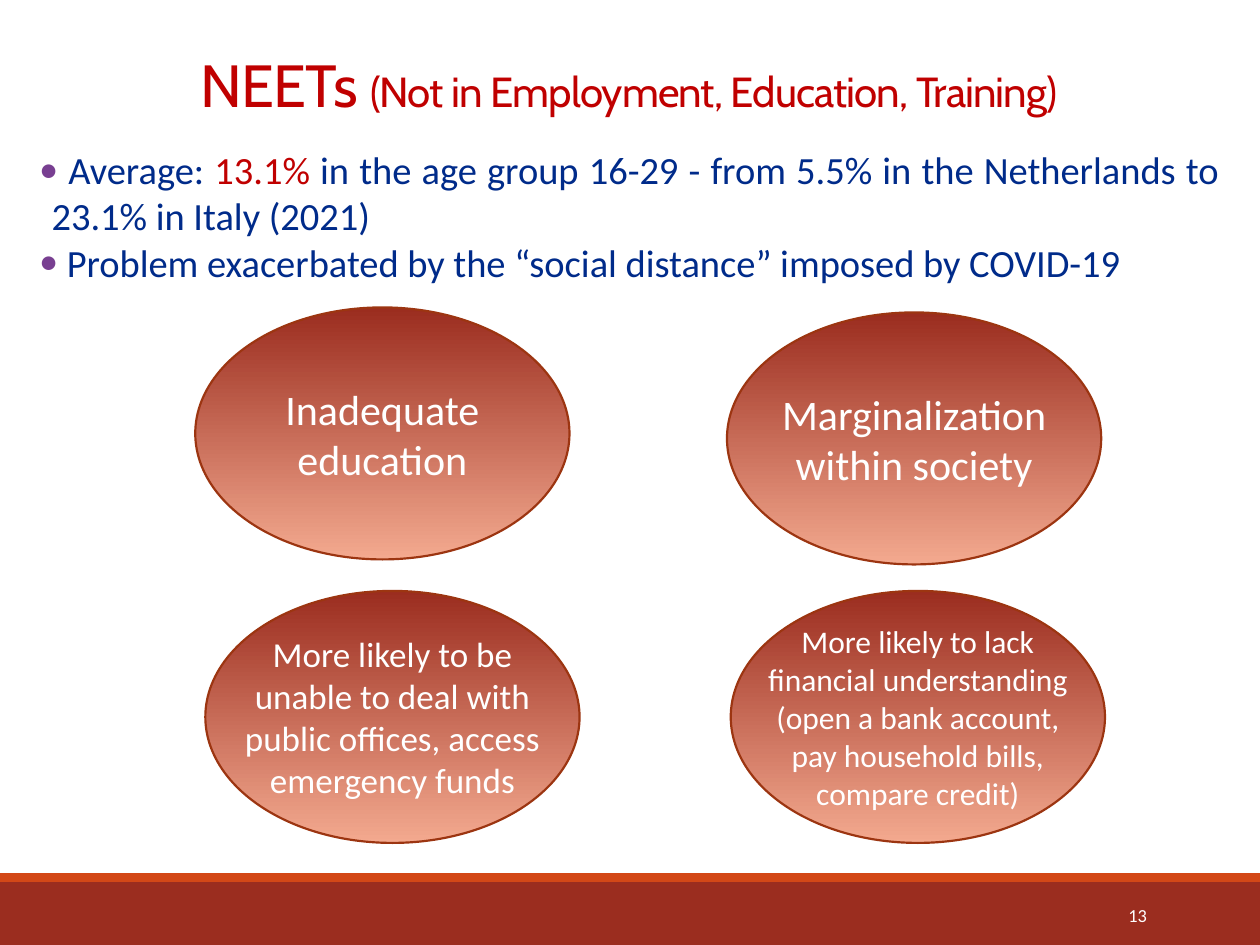
from lxml import etree
from pptx import Presentation
from pptx.dml.color import RGBColor
from pptx.enum import shapes, text
from pptx.oxml import ns
from pptx.util import Inches, Pt

WHITE = RGBColor(0xFF, 0xFF, 0xFF)
RED = RGBColor(0xC0, 0x00, 0x00)
NAVY = RGBColor(0x00, 0x2B, 0x8A)
BRICK = RGBColor(0x9B, 0x2D, 0x1F)
PEACH = RGBColor(0xF3, 0xA9, 0x8F)
RUST = RGBColor(0x9C, 0x35, 0x11)
ORANGE = RGBColor(0xD3, 0x48, 0x17)
PURPLE = "783F91"
CENTER = text.PP_ALIGN.CENTER
MIDDLE = text.MSO_ANCHOR.MIDDLE


def place(shape, box):
    shape.left, shape.top, shape.width, shape.height = map(Inches, box)


def style(frame, anchor, side, edge):
    frame.word_wrap = True
    frame.auto_size = text.MSO_AUTO_SIZE.NONE
    frame.vertical_anchor = anchor
    frame.margin_left = frame.margin_right = Inches(side)
    frame.margin_top = frame.margin_bottom = Inches(edge)


def write(para, words, size, color=WHITE, font="Calibri", align=CENTER, track=None):
    para.alignment = align
    para.line_spacing = 1
    para.space_before = para.space_after = Pt(0)
    run = para.add_run()
    run.text = words
    run.font.size = Pt(size)
    run.font.name = font
    run.font.color.rgb = color
    if track is not None:
        run.font._element.set("spc", str(int(track * 100)))


def bullet(para):
    props = para._p.get_or_add_pPr()
    props.set("marL", str(Inches(0.1)))
    props.set("indent", str(-Inches(0.1)))
    tint = etree.SubElement(props, ns.qn("a:buClr"))
    etree.SubElement(tint, ns.qn("a:srgbClr"), val=PURPLE)
    etree.SubElement(props, ns.qn("a:buFont"), typeface="Calibri")
    etree.SubElement(props, ns.qn("a:buChar"), char="•")


def band(slide, box, color):
    bar = slide.shapes.add_shape(shapes.MSO_SHAPE.RECTANGLE, *map(Inches, box))
    bar.shadow.inherit = False
    bar.fill.solid()
    bar.fill.fore_color.rgb = color
    bar.line.fill.background()


def footer(slide, box):
    left, top, width, height = box
    rim = 0.07
    band(slide, (left, top + rim, width, height - rim), BRICK)
    band(slide, (left, top, width, rim), ORANGE)
    page = slide.shapes.add_textbox(
        *map(Inches, (left + 8.12, top + 0.13, 1.08, 0.4)))
    style(page.text_frame, MIDDLE, 0.1, 0.05)
    write(page.text_frame.paragraphs[0], "13", 10.5, align=text.PP_ALIGN.RIGHT)


def title(slide, box):
    head = slide.shapes.title
    place(head, box)
    style(head.text_frame, text.MSO_ANCHOR.BOTTOM, 0.1, 0.05)
    para = head.text_frame.paragraphs[0]
    for words, size in (("NEETs ", 34),
                        ("(Not in Employment, Education, Training)", 24)):
        write(para, words, size, RED, "Cabin", track=-0.5)


def body(slide, box):
    holder = slide.placeholders[1]
    place(holder, box)
    holder.fill.solid()
    holder.fill.fore_color.rgb = WHITE
    frame = holder.text_frame
    style(frame, text.MSO_ANCHOR.TOP, 0, 0.05)
    points = (
        ((" Average: ", NAVY), ("13.1%", RED),
         (" in the age group 16-29 - from 5.5% in the Netherlands"
          " to 23.1% in Italy (2021)", NAVY)),
        ((" Problem exacerbated by the “social distance” imposed by COVID-19",
          NAVY),),
    )
    for i, parts in enumerate(points):
        para = frame.add_paragraph() if i else frame.paragraphs[0]
        for words, color in parts:
            write(para, words, 22, color, align=text.PP_ALIGN.JUSTIFY)
        bullet(para)


def bubble(slide, box, lines, size, inner):
    left, top, width, height = box
    group = slide.shapes.add_group_shape()
    oval = group.shapes.add_shape(shapes.MSO_SHAPE.OVAL, *map(Inches, box))
    oval.shadow.inherit = False
    oval.fill.gradient()
    oval.fill.gradient_angle = 270
    for stop, color, spot in zip(oval.fill.gradient_stops, (BRICK, PEACH), (0, 1)):
        stop.color.rgb = color
        stop.position = spot
    oval.line.color.rgb = RUST
    oval.line.width = Pt(1.25)
    label = group.shapes.add_textbox(*map(Inches, (
        left + (width - inner) / 2, top + 0.51, inner, 0.98)))
    frame = label.text_frame
    style(frame, MIDDLE, 0.04, 0.04)
    for i, words in enumerate(lines):
        para = frame.add_paragraph() if i else frame.paragraphs[0]
        write(para, words, size)


def main():
    deck = Presentation()
    deck.slide_width, deck.slide_height = Inches(10), Inches(7.5)
    slide = deck.slides.add_slide(deck.slide_layouts[1])
    footer(slide, (0, 6.93, 10, 0.57))
    title(slide, (0.31, 0.29, 9.37, 0.71))
    body(slide, (0.31, 1.11, 9.37, 1.46))
    causes = (
        (1.55, 2.44, ["Inadequate education"], 24, 2.1),
        (5.77, 2.48, ["Marginalization within society"], 24, 2.8),
        (5.8, 4.69, ["More likely to lack financial understanding "
                     "(open a bank account,",
                     "pay household bills,", "compare credit)"], 18, 2.8),
        (1.63, 4.69, ["More likely to be unable to deal with public offices, "
                      "access emergency funds"], 20, 2.8),
    )
    for left, top, lines, size, inner in causes:
        bubble(slide, (left, top, 2.97, 2), lines, size, inner)
    deck.save("out.pptx")


if __name__ == "__main__":
    main()
